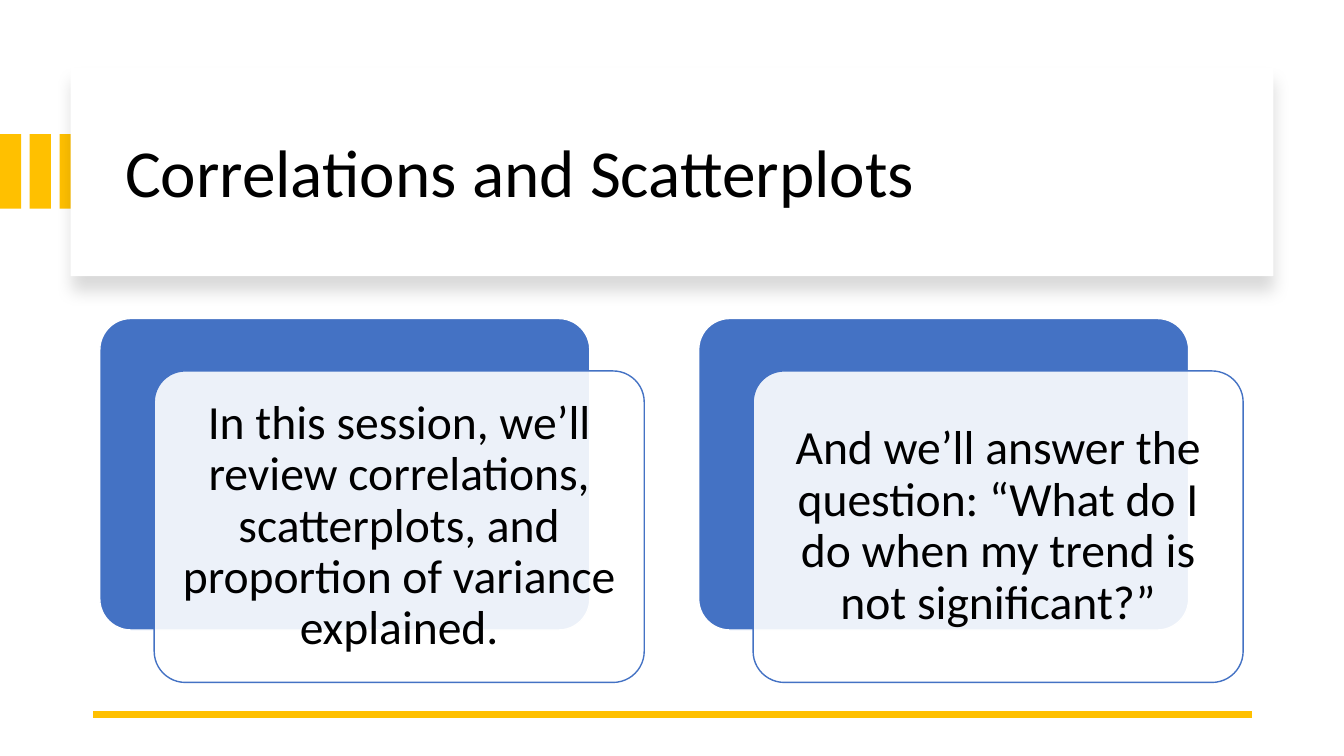
from lxml import etree
from pptx import Presentation
from pptx.dml import color
from pptx.enum import shapes, text
from pptx.oxml import ns
from pptx.util import Inches, Pt

GOLD, BLUE, WHITE, BLACK = "FFC000", "4472C4", "FFFFFF", "000000"
CARDS = [
    "In this session, we’ll review correlations, scatterplots, and proportion of variance explained.",
    "And we’ll answer the question: “What do I do when my trend is not significant?”",
]


def paint(target, value):
    """Give a fill or line format a solid colour from a hex string."""
    fill = target if hasattr(target, "solid") else target.fill
    fill.solid()
    fill.fore_color.rgb = color.RGBColor.from_string(value)


def add_child(parent, tag, **attributes):
    """Append a DrawingML element and return it."""
    return etree.SubElement(parent, ns.qn(tag), attributes)


def add_block(page, kind, left, top, width, height, fill, line=None):
    """Add a preset shape without a shadow, outlined only if a line colour is given."""
    block = page.shapes.add_shape(kind, Inches(left), Inches(top), Inches(width), Inches(height))
    block.shadow.inherit = False
    paint(block.fill, fill)
    if line:
        paint(block.line, line)
        block.line.width = Pt(1)
    else:
        block.line.fill.background()
    return block


def write(frame, words, size, alignment):
    """Write one vertically centred paragraph into a text frame."""
    frame.word_wrap = True
    frame.auto_size = text.MSO_AUTO_SIZE.NONE
    frame.vertical_anchor = text.MSO_ANCHOR.MIDDLE
    para = frame.paragraphs[0]
    para.alignment = alignment
    para.line_spacing = 0.9
    span = para.add_run()
    span.text = words
    span.font.name = "Calibri"
    span.font.size = Pt(size)
    paint(span.font.fill, BLACK)


def add_header(page, left, top, width, height):
    """Place the gold bars, the shadowed panel and the title on top of it."""
    rectangle = shapes.MSO_SHAPE.RECTANGLE
    for index in range(3):
        add_block(page, rectangle, index * 0.295, top + 0.66, 0.21, 0.74, GOLD)
    panel = add_block(page, rectangle, left, top, width, height, WHITE)
    effects = panel.element.spPr.find(ns.qn("a:effectLst"))
    shadow = add_child(effects, "a:outerShdw", blurRad=str(Pt(11)), dist=str(Pt(10)),
                       dir="5400000", algn="t", rotWithShape="0")
    add_child(add_child(shadow, "a:srgbClr", val=BLACK), "a:alpha", val="15000")
    title = page.shapes.title
    title.left, title.top = Inches(left + 0.44), Inches(top + 0.22)
    title.width, title.height = Inches(width - 0.8), Inches(height - 0.37)
    write(title.text_frame, "Correlations and Scatterplots", 48, text.PP_ALIGN.LEFT)
    panel.element.addnext(title.element)


def add_rule(page, left, top, width):
    """Draw the gold line at the foot of the slide."""
    rule = page.shapes.add_connector(shapes.MSO_CONNECTOR.STRAIGHT, Inches(left + width),
                                     Inches(top), Inches(left), Inches(top))
    paint(rule.line, GOLD)
    rule.line.width = Pt(4.5)
    add_child(rule.element.spPr, "a:effectLst")


def add_card(page, left, top, width, height, words):
    """Place a blue card with a translucent text card offset over it."""
    rounded = shapes.MSO_SHAPE.ROUNDED_RECTANGLE
    back = add_block(page, rounded, left, top, width, height, BLUE, WHITE)
    front = add_block(page, rounded, left + 0.54, top + 0.52, width, height, WHITE, BLUE)
    for card in (back, front):
        card.adjustments[0] = 0.1
    fill_color = front.element.spPr.find(ns.qn("a:solidFill"))[0]
    add_child(fill_color, "a:alpha", val="90000")
    frame = front.text_frame
    frame.margin_left = frame.margin_right = Inches(0.14)
    frame.margin_top = frame.margin_bottom = Inches(0.14)
    write(frame, words, 34, text.PP_ALIGN.CENTER)


def main():
    """Build the slide and save the deck."""
    deck = Presentation()
    deck.slide_width, deck.slide_height = Inches(13.33), Inches(7.5)
    page = deck.slides.add_slide(deck.slide_layouts[5])
    add_header(page, 0.7, 0.67, 11.93, 2.07)
    add_rule(page, 0.92, 7.09, 11.5)
    for index, words in enumerate(CARDS):
        add_card(page, 0.99 + index * 5.94, 3.16, 4.86, 3.09, words)
    deck.save("out.pptx")


if __name__ == "__main__":
    main()
